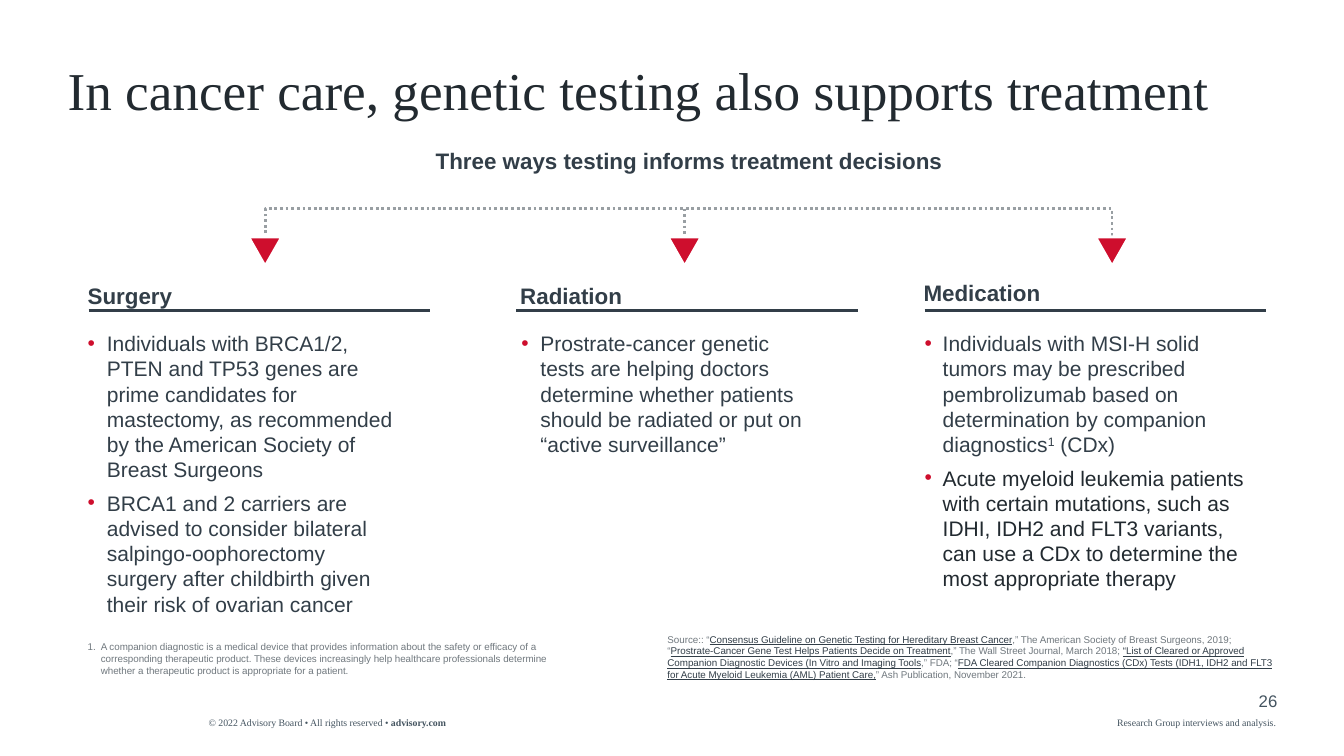
"""Build the slide on how genetic testing supports cancer treatment."""
from lxml.etree import SubElement
from pptx import Presentation
from pptx.dml.color import RGBColor
from pptx.enum.dml import MSO_LINE
from pptx.enum.shapes import MSO_CONNECTOR, MSO_SHAPE
from pptx.enum.text import MSO_ANCHOR, MSO_AUTO_SIZE, PP_ALIGN
from pptx.oxml.ns import qn
from pptx.util import Inches, Pt

INK = RGBColor(0x22, 0x2A, 0x30)
SLATE = RGBColor(0x32, 0x3E, 0x48)
FOOTER = RGBColor(0x44, 0x54, 0x60)
GRAY = RGBColor(0x70, 0x78, 0x7E)
DOTS = RGBColor(0x99, 0x9F, 0xA3)
RED = RGBColor(0xCE, 0x0E, 0x2D)
WHITE = RGBColor(0xFF, 0xFF, 0xFF)
SANS, SERIF = "Arial", "Times New Roman"

TITLE = "In cancer care, genetic testing also supports treatment"
SUBTITLE = "Three ways testing informs treatment decisions"
WAYS = [
    {"heading": "Surgery", "heading_at": (0.87, 2.8), "rule_left": 0.88, "stem": 2.63,
     "list_box": (0.87, 3.28, 3.1, 3.2), "indent": 0.19,
     "points": [
         "Individuals with BRCA1/2, PTEN and TP53 genes are prime candidates for mastectomy, "
         "as recommended by the American Society of Breast Surgeons",
         "BRCA1 and 2 carriers are advised to consider bilateral salpingo-oophorectomy surgery "
         "after childbirth given their risk of ovarian cancer"]},
    {"heading": "Radiation", "heading_at": (5.16, 2.8), "rule_left": 5.12, "stem": 6.79,
     "list_box": (5.17, 3.28, 2.95, 1.26), "indent": 0.19,
     "points": [
         "Prostrate-cancer genetic tests are helping doctors determine whether patients "
         "should be radiated or put on “active surveillance”"]},
    {"heading": "Medication", "heading_at": (9.16, 2.77), "rule_left": 9.17, "stem": 11.03,
     "list_box": (9.17, 3.28, 3.2, 2.61), "indent": 0.18,
     "points": [
         ["Individuals with MSI-H solid tumors may be prescribed pembrolizumab based on "
          "determination by companion diagnostics", ("1", {"raised": True}), " (CDx)"],
         [("Acute myeloid leukemia patients with certain mutations, such as IDHI, IDH2 and FLT3 "
           "variants, can use a CDx to determine the most appropriate therapy", {"color": INK})]]},
]
FOOTNOTE = ("A companion diagnostic is a medical device that provides information about the safety "
            "or efficacy of a corresponding therapeutic product. These devices increasingly help "
            "healthcare professionals determine whether a therapeutic product is appropriate for "
            "a patient.")
CITED = {"color": SLATE, "underline": True}
SOURCES = [
    "Source:: “",
    ("Consensus Guideline on Genetic Testing for Hereditary Breast Cancer", CITED),
    ",” The American Society of Breast Surgeons, 2019; “",
    ("Prostrate-Cancer Gene Test Helps Patients Decide on Treatment", CITED),
    ",” The Wall Street Journal, March 2018; ",
    ("“List of Cleared or Approved Companion Diagnostic Devices (In Vitro and Imaging Tools", CITED),
    ",” FDA; “",
    ("FDA Cleared Companion Diagnostics (CDx) Tests (IDH1, IDH2 and FLT3 for Acute Myeloid "
     "Leukemia (AML) Patient Care,", CITED),
    "” Ash Publication, November 2021.",
]
COPYRIGHT = ["© 2022 Advisory Board • All rights reserved • ", ("advisory.com", {"bold": True})]
CREDIT = "Research Group interviews and analysis."
PAGE = "26"

BRACKET_TOP, BRACKET_BOTTOM = 2.07, 2.37
ARROW_TOP, ARROW_WIDTH, ARROW_HEIGHT = 2.35, 0.33, 0.29
RULE_TOP, RULE_WIDTH = 3.08, 3.39


def write(shape, paragraphs, *, box, size, font=SANS, color=SLATE, bold=False,
          align=PP_ALIGN.LEFT, anchor=MSO_ANCHOR.TOP, gap=0, spacing=1.0,
          bullet=None, bullet_color=RED, indent=0):
    """Place a shape and fill it with paragraphs made of plain or formatted runs."""
    shape.left, shape.top, shape.width, shape.height = map(Inches, box)
    frame = shape.text_frame
    frame.word_wrap, frame.auto_size, frame.vertical_anchor = True, MSO_AUTO_SIZE.NONE, anchor
    frame.margin_left = frame.margin_top = frame.margin_right = frame.margin_bottom = 0
    for index, runs in enumerate(paragraphs):
        paragraph = frame.add_paragraph() if index else frame.paragraphs[0]
        if bullet:
            properties = paragraph._p.get_or_add_pPr()
            properties.set("marL", str(Inches(indent)))
            properties.set("indent", str(-Inches(indent)))
            tint = SubElement(properties, qn("a:buClr"))
            SubElement(tint, qn("a:srgbClr"), val=str(bullet_color))
            SubElement(properties, qn("a:buFont"), typeface=SANS)
            SubElement(properties, qn(bullet[0]), **bullet[1])
        paragraph.alignment, paragraph.line_spacing = align, spacing
        paragraph.space_before = Pt(gap if index else 0)
        for part in [runs] if isinstance(runs, str) else runs:
            text, style = (part, {}) if isinstance(part, str) else part
            run = paragraph.add_run()
            run.text = text
            run.font.name, run.font.size = font, Pt(size)
            run.font.bold = style.get("bold", bold)
            run.font.color.rgb = style.get("color", color)
            if style.get("underline"):
                run.font.underline = True
            if style.get("raised"):
                run._r.get_or_add_rPr().set("baseline", "30000")


def style_line(line, color, width, dash=None):
    """Set the colour, width and dash of a line."""
    line.color.rgb, line.width = color, Pt(width)
    if dash:
        line.dash_style = dash


def draw_line(shapes, start, end, *line_style):
    """Draw a straight connector without a shadow."""
    connector = shapes.add_connector(MSO_CONNECTOR.STRAIGHT, *map(Inches, start + end))
    style_line(connector.line, *line_style)
    SubElement(connector._element.spPr, qn("a:effectLst"))


def draw_bracket(shapes):
    """Draw the dotted bracket, its middle stem and the three arrowheads."""
    stems = [way["stem"] for way in WAYS]
    left, middle, right = stems
    dotted = (DOTS, 2, MSO_LINE.ROUND_DOT)
    outline = shapes.build_freeform(Inches(left), Inches(BRACKET_BOTTOM))
    corners = [(left, BRACKET_TOP), (right, BRACKET_TOP), (right, BRACKET_BOTTOM)]
    outline.add_line_segments([(Inches(x), Inches(y)) for x, y in corners], close=False)
    bracket = outline.convert_to_shape()
    bracket.fill.background()
    bracket.shadow.inherit = False
    style_line(bracket.line, *dotted)
    draw_line(shapes, (middle, BRACKET_TOP), (middle, 2.33), *dotted)
    for stem in stems:
        arrow = shapes.add_shape(
            MSO_SHAPE.ISOSCELES_TRIANGLE, Inches(stem - ARROW_WIDTH / 2), Inches(ARROW_TOP),
            Inches(ARROW_WIDTH), Inches(ARROW_HEIGHT))
        arrow.rotation = 180
        arrow.shadow.inherit = False
        arrow.fill.solid()
        arrow.fill.fore_color.rgb = RED
        style_line(arrow.line, WHITE, 2)


def main():
    """Assemble and save the slide."""
    deck = Presentation()
    deck.slide_width, deck.slide_height = Inches(13.33), Inches(7.5)
    slide = deck.slides.add_slide(deck.slide_layouts.get_by_name("Comparison"))
    shapes = slide.shapes
    title, *lists, footnote = slide.placeholders

    def add_text(paragraphs, **style):
        write(shapes.add_textbox(0, 0, 0, 0), paragraphs, **style)

    write(title, [TITLE], box=(0.67, 0.64, 12, 0.59), size=38, font=SERIF, color=INK, spacing=0.9)
    add_text([SUBTITLE], box=(2.45, 1.46, 8.77, 0.27), size=16, bold=True, align=PP_ALIGN.CENTER)
    draw_bracket(shapes)
    for way, points in zip(WAYS, lists):
        add_text([way["heading"]], box=(*way["heading_at"], RULE_WIDTH, 0.27), size=16, bold=True)
        rule_left = way["rule_left"]
        draw_line(shapes, (rule_left, RULE_TOP), (rule_left + RULE_WIDTH, RULE_TOP), SLATE, 1.5)
        write(points, way["points"], box=way["list_box"], size=15, gap=6,
              bullet=("a:buChar", {"char": "•"}), indent=way["indent"])
    write(footnote, [FOOTNOTE], box=(0.87, 6.36, 4.68, 0.35), size=7, color=GRAY,
          anchor=MSO_ANCHOR.BOTTOM, bullet=("a:buAutoNum", {"type": "arabicPeriod"}),
          bullet_color=GRAY, indent=0.13)
    add_text([SOURCES], box=(6.62, 6.28, 6.04, 0.47), size=7, color=GRAY, anchor=MSO_ANCHOR.BOTTOM)
    add_text([COPYRIGHT], box=(2.07, 7.11, 3.26, 0.12), size=7, font=SERIF, color=FOOTER)
    add_text([CREDIT], box=(11.08, 7.11, 1.59, 0.12), size=7, font=SERIF, color=FOOTER)
    add_text([PAGE], box=(12.17, 6.85, 0.5, 0.2), size=12, color=FOOTER, align=PP_ALIGN.RIGHT)
    deck.save("out.pptx")


if __name__ == "__main__":
    main()
